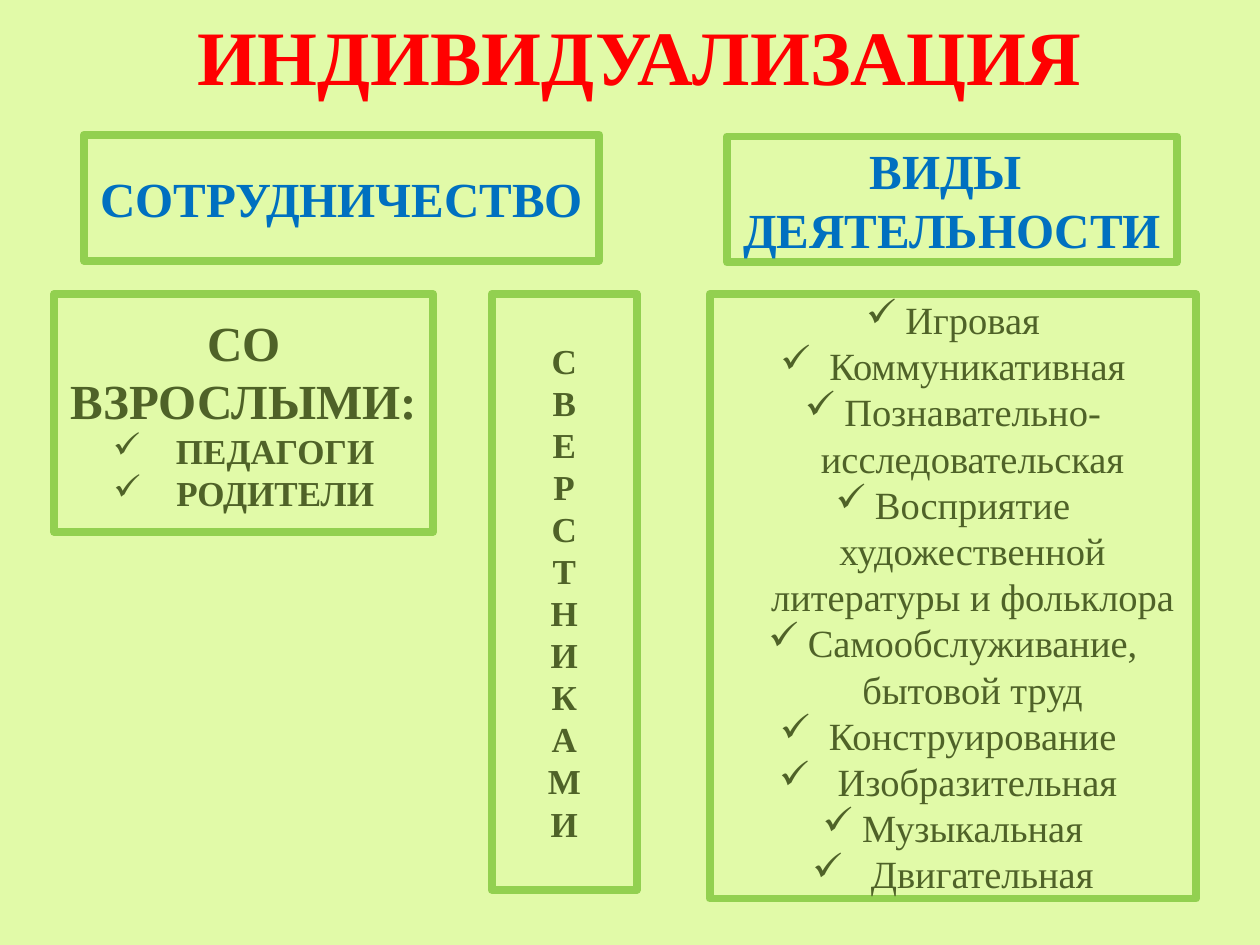
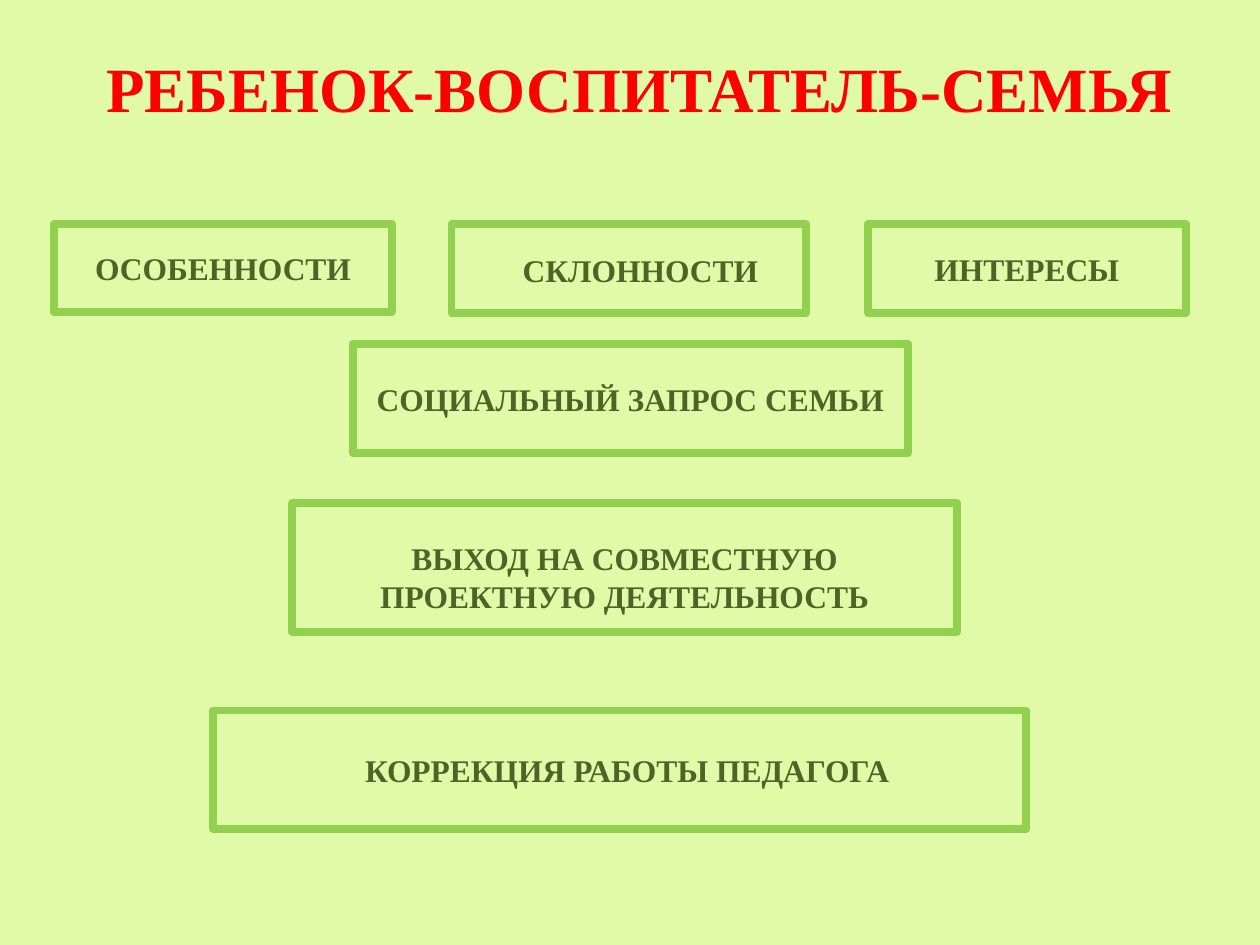
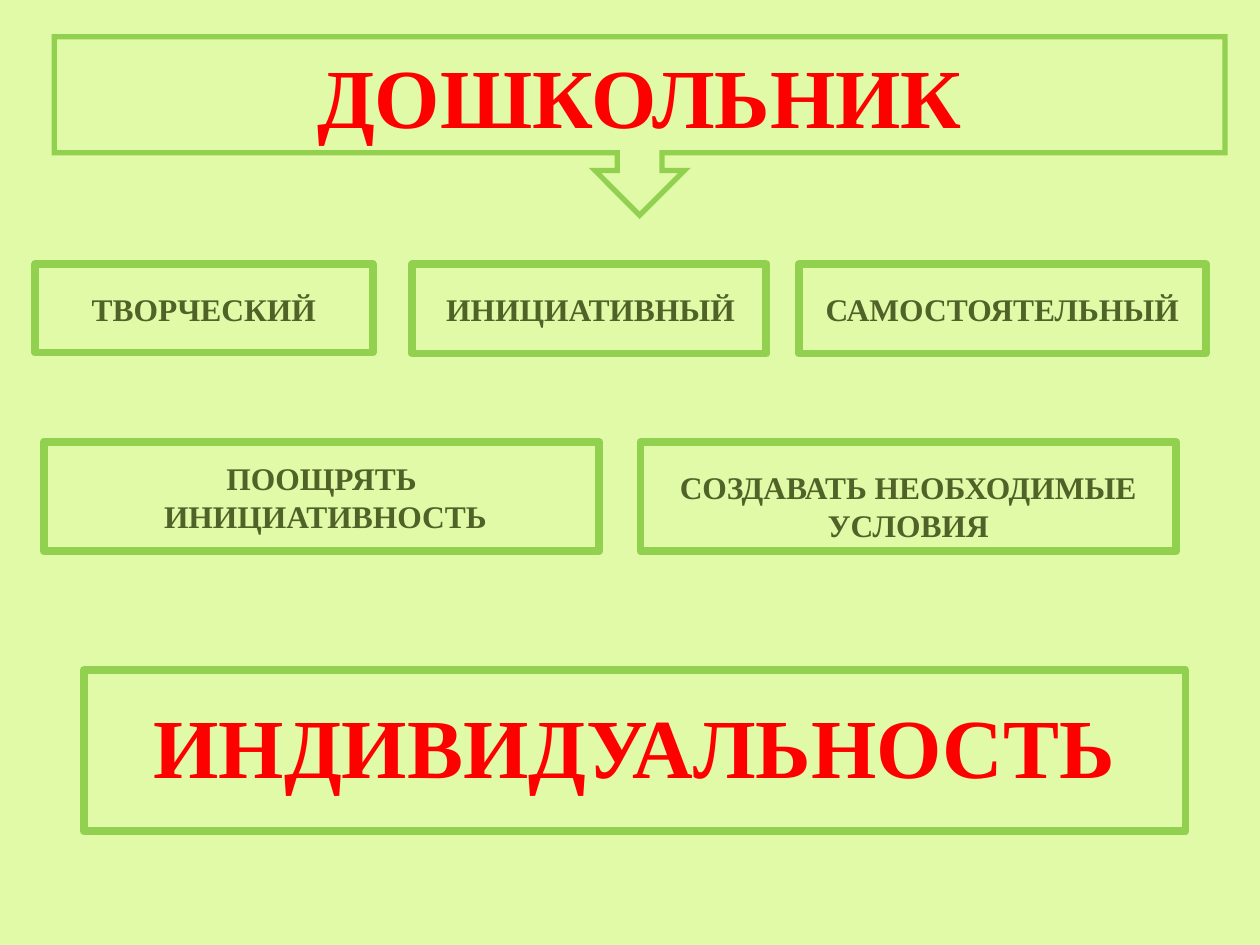
from lxml.etree import SubElement
from pptx import Presentation
from pptx.dml.color import RGBColor
from pptx.enum.shapes import MSO_SHAPE as Preset
from pptx.enum.text import MSO_ANCHOR as Anchor, PP_ALIGN as Align
from pptx.oxml.ns import qn
from pptx.util import Pt

COLORS = {
    "background": "E1FAA8",
    "frame": "92D050",
    "title": "FF0000",
    "heading": "0070C0",
    "body": "4F6228",
}
RGB = {part: RGBColor.from_string(code) for part, code in COLORS.items()}
FONT = "Times New Roman"


def write(shape, text, size=18, color="body", bold=True):
    """Put centred text into the shape, one paragraph per line."""
    frame = shape.text_frame
    frame.word_wrap = True
    frame.vertical_anchor = Anchor.MIDDLE
    frame.text = text
    for paragraph in frame.paragraphs:
        paragraph.alignment = Align.CENTER
        for run in paragraph.runs:
            run.font.name = FONT
            run.font.size = Pt(size)
            run.font.bold = bold
            run.font.color.rgb = RGB[color]


def add_frame(slide, place, preset=Preset.RECTANGLE, line_width=4.5):
    frame = slide.shapes.add_shape(preset, *map(Pt, place))
    frame.shadow.inherit = False
    frame.fill.solid()
    frame.fill.fore_color.rgb = RGB["background"]
    if line_width:
        frame.line.color.rgb = RGB["frame"]
        frame.line.width = Pt(line_width)
    else:
        frame.line.fill.background()
    return frame


prs = Presentation()
prs.slide_width, prs.slide_height = Pt(720), Pt(540)
slides = [prs.slides.add_slide(prs.slide_layouts[6]) for _ in range(3)]
for slide in slides:
    slide.background.fill.solid()
    slide.background.fill.fore_color.rgb = RGB["background"]
individualization, partnership, preschooler = slides

# Titles
for slide, place, text, size in [
    (individualization, (93.5, -13.5, 556, 90), "ИНДИВИДУАЛИЗАЦИЯ ", 44),
    (partnership, (31, 5, 669, 90), "РЕБЕНОК-ВОСПИТАТЕЛЬ-СЕМЬЯ", 36),
]:
    write(slide.shapes.add_textbox(*map(Pt, place)), text, size, "title")

# Slide 1: cooperation and kinds of activity
for place, heading in [
    ((48, 77, 294.5, 72), "СОТРУДНИЧЕСТВО"),
    ((415.5, 78, 257, 72), "ВИДЫ \nДЕЯТЕЛЬНОСТИ"),
]:
    write(add_frame(individualization, place), heading, 28, "heading")

adults = add_frame(individualization, (31, 168, 216.5, 136))
write(adults, "СО ВЗРОСЛЫМИ:\nПЕДАГОГИ\nРОДИТЕЛИ", 20)
adults_heading, *adult_groups = adults.text_frame.paragraphs
adults_heading.runs[0].font.size = Pt(28)

peers = add_frame(individualization, (281, 168, 83, 340.5))
write(peers, "СВЕРСТНИКАМИ", 20)
peers.text_frame._txBody.bodyPr.set("vert", "wordArtVert")

# Each activity with the distance from its tick to its text
activities = [
    ("Игровая", 22.5),
    ("Коммуникативная", 28),
    ("Познавательно-исследовательская", 22.5),
    ("Восприятие художественной литературы и фольклора", 22.5),
    ("Самообслуживание, бытовой труд", 22.5),
    ("Конструирование ", 28),
    ("Изобразительная ", 33.5),
    ("Музыкальная", 22.5),
    ("Двигательная", 33.5),
]
activity_list = add_frame(individualization, (405.5, 168, 278, 345.5))
write(activity_list, "\n".join(name for name, _ in activities), 22, bold=False)

ticked = [(group, 36) for group in adult_groups]
ticked += zip(activity_list.text_frame.paragraphs, (gap for _, gap in activities))
for paragraph, gap in ticked:
    properties = paragraph._p.get_or_add_pPr()
    properties.set("marL", str(Pt(gap)))
    properties.set("indent", str(-Pt(gap)))
    SubElement(properties, qn("a:buChar"), char="✓")

# Slide 2: what joint work with the family rests on
for place, text in [
    ((31, 128, 193, 50.5), "ОСОБЕННОСТИ"),
    ((496, 128, 181.5, 51), "ИНТЕРЕСЫ"),
    ((201.5, 196.5, 317.5, 62.5), "СОЦИАЛЬНЫЙ ЗАПРОС СЕМЬИ"),
]:
    write(add_frame(partnership, place), text)

project_work = add_frame(partnership, (167, 287.5, 380, 73.5))
write(project_work, "ВЫХОД НА СОВМЕСТНУЮ ПРОЕКТНУЮ ДЕЯТЕЛЬНОСТЬ")
project_work.text_frame.margin_top = Pt(14.5)

correction = add_frame(partnership, (121.5, 406, 465, 67.5))
write(correction, "КОРРЕКЦИЯ РАБОТЫ ПЕДАГОГА")
correction.text_frame.margin_left = Pt(16)

# Slide 3: qualities of the preschooler
callout = add_frame(preschooler, (31, 21, 669, 102), Preset.DOWN_ARROW_CALLOUT, 3)
callout.fill.background()
SubElement(callout.line._get_or_add_ln(), qn("a:miter"), lim="800000")
write(callout, "ДОШКОЛЬНИК", 48, "title")

for place, text in [
    ((20, 151, 193, 50.5), "ТВОРЧЕСКИЙ"),
    ((456.5, 151, 232.5, 51), "САМОСТОЯТЕЛЬНЫЙ"),
    ((25, 252.5, 317.5, 62.5), "ПООЩРЯТЬ\n ИНИЦИАТИВНОСТЬ"),
]:
    write(add_frame(preschooler, place), text)

conditions = add_frame(preschooler, (366, 252.5, 306, 62.5))
write(conditions, "СОЗДАВАТЬ НЕОБХОДИМЫЕ УСЛОВИЯ")
conditions.text_frame.margin_top = Pt(14.5)

individuality = add_frame(preschooler, (48, 383, 629.5, 92))
write(individuality, "ИНДИВИДУАЛЬНОСТЬ", 48, "title")
individuality.text_frame.margin_bottom = Pt(10.5)

# Middle frames of slides 2 and 3, each with a separate label on it
for slide, frame_place, label_place, text in [
    (partnership, (258, 128, 202.5, 51), (286.5, 139.5, 159, 29), "СКЛОННОСТИ"),
    (preschooler, (235.5, 151, 202.5, 51), (241, 162, 193, 29), "ИНИЦИАТИВНЫЙ"),
]:
    add_frame(slide, frame_place)
    write(add_frame(slide, label_place, line_width=0), text)

prs.save("out.pptx")
